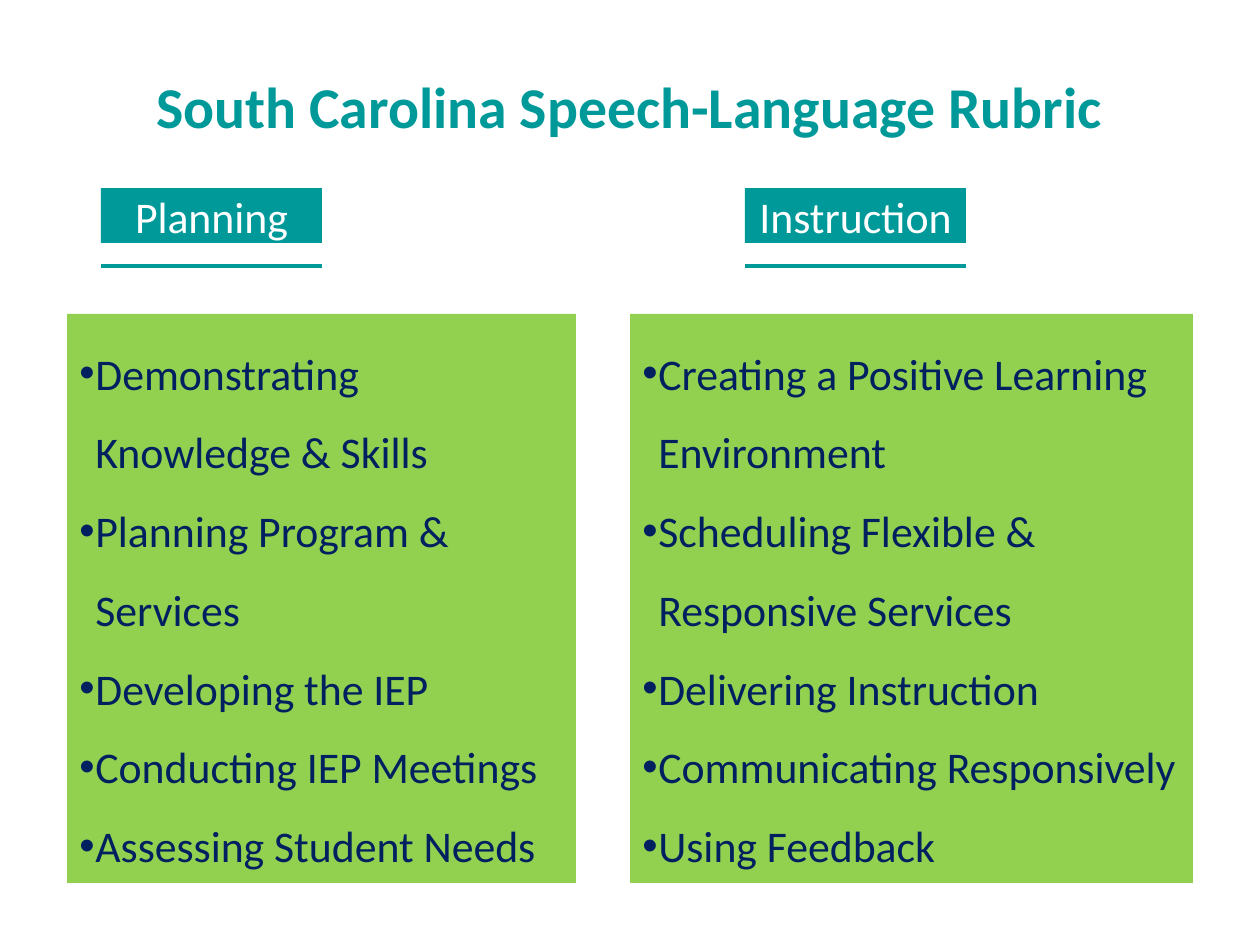
"""Build the speech-language rubric slide with its two domain columns."""
from lxml import etree
from pptx import Presentation
from pptx.dml.color import RGBColor
from pptx.enum.shapes import MSO_CONNECTOR, MSO_SHAPE
from pptx.enum.text import MSO_ANCHOR, MSO_AUTO_SIZE, PP_ALIGN
from pptx.oxml.ns import qn
from pptx.util import Emu, Pt

TEAL = RGBColor(0x00, 0x99, 0x9A)
GREEN = RGBColor(0x92, 0xD0, 0x50)
NAVY = RGBColor(0x00, 0x20, 0x60)
WHITE = RGBColor(0xFF, 0xFF, 0xFF)
RECTANGLE = MSO_SHAPE.RECTANGLE
STRAIGHT = MSO_CONNECTOR.STRAIGHT
TOP, MIDDLE, BOTTOM = MSO_ANCHOR.TOP, MSO_ANCHOR.MIDDLE, MSO_ANCHOR.BOTTOM
LEFT, CENTER = PP_ALIGN.LEFT, PP_ALIGN.CENTER
GROW = MSO_AUTO_SIZE.SHAPE_TO_FIT_TEXT
PX_PER_INCH = 126
EMU_PER_INCH = 914400

LABEL_TOP, LABEL_WIDTH, LABEL_HEIGHT = 188, 221, 55
RULE_Y = 266
PANEL_TOP, PANEL_HEIGHT = 314, 569
BULLET_INDENT = 16

DOMAINS = [
    ("Planning", 101, 67, 509, [
        "Demonstrating Knowledge & Skills",
        "Planning Program & Services",
        "Developing the IEP",
        "Conducting IEP Meetings",
        "Assessing Student Needs",
    ]),
    ("Instruction", 745, 630, 563, [
        "Creating a Positive Learning Environment",
        "Scheduling Flexible & Responsive Services",
        "Delivering Instruction",
        "Communicating Responsively",
        "Using Feedback",
    ]),
]


def px(length):
    return Emu(round(length * EMU_PER_INCH / PX_PER_INCH))


class RubricSlide:
    font = "Calibri"
    body_size = 25
    title_size = 33

    def __init__(self, presentation):
        self.slide = presentation.slides.add_slide(presentation.slide_layouts[6])

    def add_wording(self, paragraph, wording, color, size, align, bold=False):
        paragraph.alignment = align
        run = paragraph.add_run()
        run.text = wording
        run.font.name = self.font
        run.font.size = Pt(size)
        run.font.bold = bold
        run.font.color.rgb = color

    def title(self, wording, left, top, width, height):
        box = self.slide.shapes.add_textbox(px(left), px(top), px(width), px(height))
        frame = box.text_frame
        frame.word_wrap = True
        frame.vertical_anchor = BOTTOM
        frame.margin_left = frame.margin_right = 0
        frame.margin_top = frame.margin_bottom = 0
        heading = frame.paragraphs[0]
        heading.line_spacing = 0.85
        self.add_wording(heading, wording, TEAL, self.title_size, CENTER, bold=True)

    def block(self, left, top, width, height, fill, anchor):
        block = self.slide.shapes.add_shape(
            RECTANGLE, px(left), px(top), px(width), px(height))
        block.shadow.inherit = False
        block.fill.solid()
        block.fill.fore_color.rgb = fill
        block.line.fill.background()
        block.text_frame.word_wrap = True
        block.text_frame.vertical_anchor = anchor
        return block.text_frame

    def label(self, wording, left):
        frame = self.block(left, LABEL_TOP, LABEL_WIDTH, LABEL_HEIGHT, TEAL, MIDDLE)
        self.add_wording(frame.paragraphs[0], wording, WHITE, self.body_size, CENTER)

    def panel(self, standards, left, width):
        frame = self.block(left, PANEL_TOP, width, PANEL_HEIGHT, GREEN, TOP)
        frame.auto_size = GROW
        for index, standard in enumerate(standards):
            item = frame.add_paragraph() if index else frame.paragraphs[0]
            item.line_spacing = 1.5
            self.add_wording(item, standard, NAVY, self.body_size, LEFT)
            self.bullet(item)

    def bullet(self, paragraph):
        properties = paragraph._p.get_or_add_pPr()
        properties.set("marL", str(px(BULLET_INDENT)))
        properties.set("indent", str(-px(BULLET_INDENT)))
        etree.SubElement(properties, qn("a:buFont"), typeface="Arial")
        etree.SubElement(properties, qn("a:buChar"), char="•")

    def rule(self, left):
        rule = self.slide.shapes.add_connector(
            STRAIGHT, px(left), px(RULE_Y), px(left + LABEL_WIDTH), px(RULE_Y))
        rule.line.color.rgb = TEAL
        rule.line.width = Pt(2.25)
        etree.SubElement(rule._element.spPr, qn("a:effectLst"))


def main():
    presentation = Presentation()
    presentation.slide_width = px(1260)
    presentation.slide_height = px(945)
    rubric = RubricSlide(presentation)
    rubric.title("South Carolina Speech-Language Rubric", 113, 24, 1033, 116)
    for domain, label_left, panel_left, panel_width, standards in DOMAINS:
        rubric.label(domain, label_left)
        rubric.panel(standards, panel_left, panel_width)
        rubric.rule(label_left)
    presentation.save("out.pptx")


if __name__ == "__main__":
    main()
